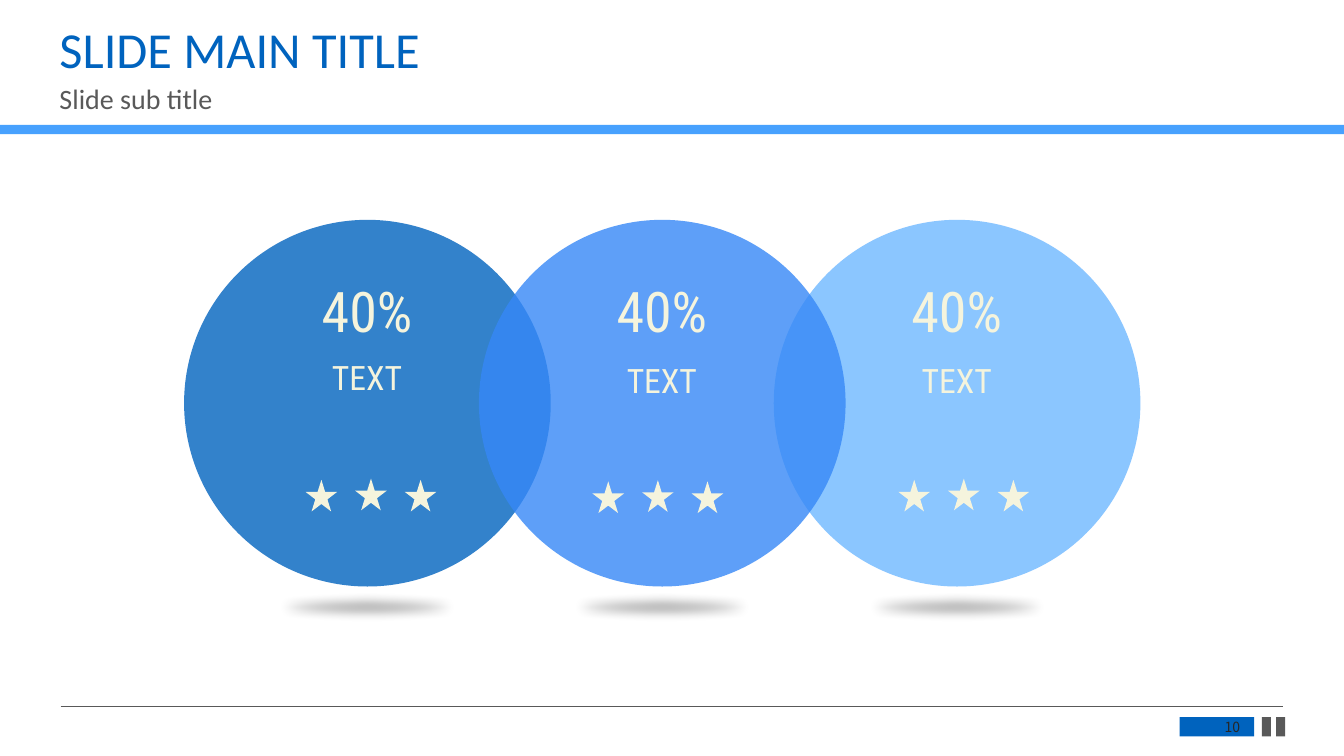
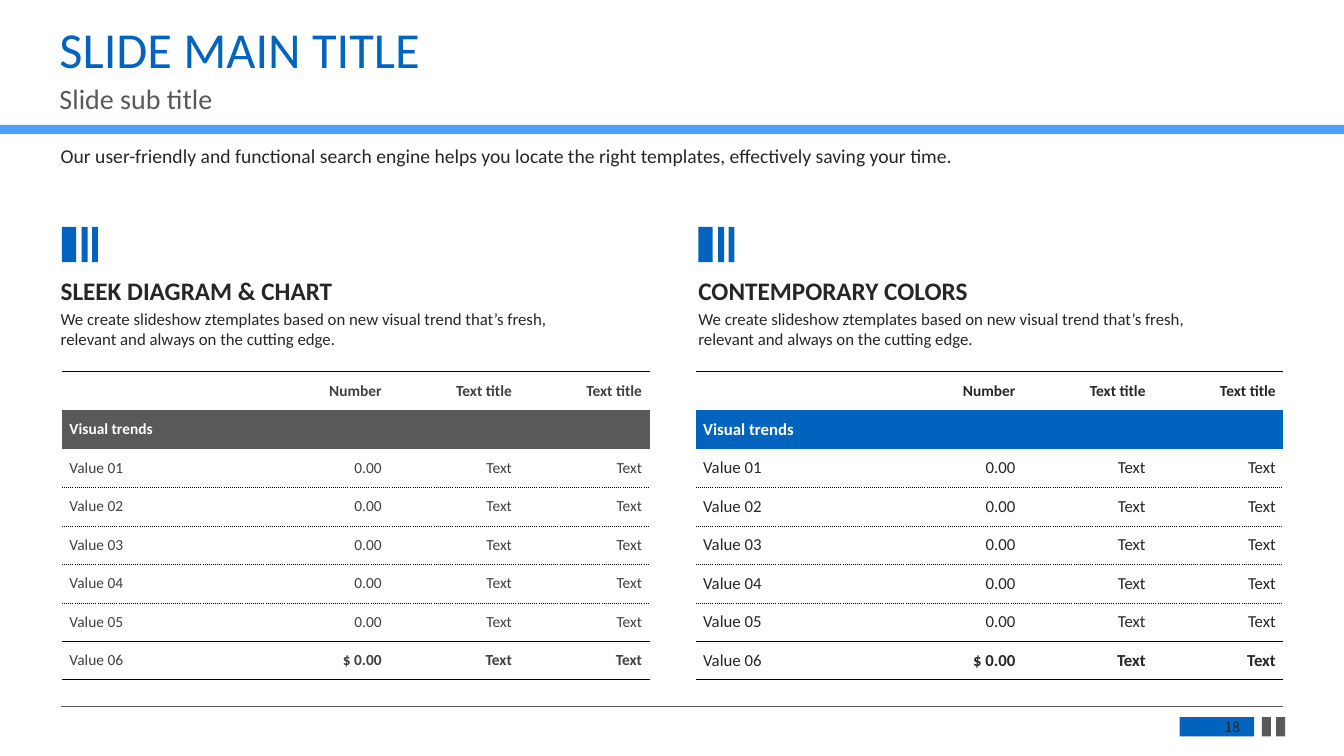
from lxml import etree
from pptx import Presentation
from pptx import util as u
from pptx.dml.color import RGBColor
from pptx.enum import shapes, text
from pptx.oxml import ns

COLORS = {
    "blue": "0063BE", "band": "47A1FE", "gray": "595959", "ink": "262626",
    "soft_ink": "404040", "middle": "3688F7", "light": "6EB8FF",
    "cream": "F5F4DD", "white": "FFFFFF", "black": "000000",
}
BODY_FONT, FIGURE_FONT, NUMBER_FONT = "Calibri", "Roboto Condensed", "Noto Sans CJK SC"
SHAPE = shapes.MSO_SHAPE
LEFT, CENTER, RIGHT = text.PP_ALIGN.LEFT, text.PP_ALIGN.CENTER, text.PP_ALIGN.RIGHT
TOP, MIDDLE = text.MSO_ANCHOR.TOP, text.MSO_ANCHOR.MIDDLE


def rgb(name):
    return RGBColor.from_string(COLORS[name])


def add_xml(parent, tag, **attributes):
    return etree.SubElement(parent, ns.qn(tag), attributes)


class Deck:
    """Shared style and the slide being built; lengths are in centimetres."""

    def __init__(self):
        self.presentation = Presentation()
        self.presentation.slide_width = u.Cm(33.87)
        self.presentation.slide_height = u.Cm(19.05)
        self.slide = None

    def new_slide(self, title, subtitle, number):
        self.slide = self.presentation.slides.add_slide(self.presentation.slide_layouts[6])
        # Band under the title
        self.shape(SHAPE.RECTANGLE, 0, 3.15, 33.87, 0.23, "band")
        # Footer rule and page marker
        self.line(1.53, 17.81, 32.33, 17.81, "gray", 0.5)
        for left, width, color in ((29.73, 1.88, "blue"), (31.8, 0.23, "gray"), (32.16, 0.23, "gray")):
            self.shape(SHAPE.RECTANGLE, left, 18.07, width, 0.49, color)
        self.text(number, 29.82, 18.1, 1.68, 0.43, 10, font=NUMBER_FONT, align=RIGHT, anchor=MIDDLE)
        # Title and subtitle
        self.text(title, 1.25, 0.5, 30.94, 1.63, 36, "blue", spacing=0.9)
        self.text(subtitle, 1.25, 2.02, 30.94, 1.14, 20, "gray", spacing=0.9)

    def shape(self, kind, left, top, width, height, color, opacity=100, soft_edge=0):
        shape = self.slide.shapes.add_shape(kind, u.Cm(left), u.Cm(top), u.Cm(width), u.Cm(height))
        shape.shadow.inherit = False
        shape.fill.solid()
        shape.fill.fore_color.rgb = rgb(color)
        shape.line.fill.background()
        properties = shape._element.spPr
        if opacity < 100:
            color_element = properties.find(ns.qn("a:solidFill"))[0]
            add_xml(color_element, "a:alpha", val=str(opacity * 1000))
        if soft_edge:
            effects = properties.find(ns.qn("a:effectLst"))
            add_xml(effects, "a:softEdge", rad=str(u.Pt(soft_edge)))

    def line(self, left, top, right, bottom, color, width):
        line = self.slide.shapes.add_connector(
            shapes.MSO_CONNECTOR.STRAIGHT, u.Cm(left), u.Cm(top), u.Cm(right), u.Cm(bottom))
        line.line.color.rgb = rgb(color)
        line.line.width = u.Pt(width)
        add_xml(line._element.spPr, "a:effectLst")

    def run(self, paragraph, words, size, color, font=BODY_FONT, bold=False):
        run = paragraph.add_run()
        run.text = words
        run.font.size = u.Pt(size)
        run.font.name = font
        run.font.bold = bold
        run.font.color.rgb = rgb(color)

    def text(self, words, left, top, width, height, size, color="ink", font=BODY_FONT,
             bold=False, align=LEFT, anchor=TOP, spacing=1.0):
        box = self.slide.shapes.add_textbox(u.Cm(left), u.Cm(top), u.Cm(width), u.Cm(height))
        frame = box.text_frame
        frame.word_wrap = True
        frame.vertical_anchor = anchor
        paragraph = frame.paragraphs[0]
        paragraph.alignment = align
        paragraph.line_spacing = spacing
        self.run(paragraph, words, size, color, font, bold)

    def borders(self, cell, top, bottom):
        properties = cell._tc.get_or_add_tcPr()
        for side, border in (("L", None), ("R", None), ("T", top), ("B", bottom)):
            width, dash = border or (0, None)
            line = add_xml(properties, f"a:ln{side}", w=str(u.Pt(width)))
            if not border:
                add_xml(line, "a:noFill")
                continue
            fill = add_xml(line, "a:solidFill")
            add_xml(fill, "a:srgbClr", val=COLORS["black"])
            add_xml(line, "a:prstDash", val=dash)

    def table(self, rows, left, top, widths, row_height, accent, ink, size):
        table = self.slide.shapes.add_table(
            len(rows), len(widths), u.Cm(left), u.Cm(top),
            u.Cm(sum(widths)), u.Cm(row_height * len(rows))).table
        table.first_row = table.horz_banding = False
        for column, width in zip(table.columns, widths):
            column.width = u.Cm(width)
        # Rules above and below the rows, from top to bottom
        thick, thin, dotted = (1, "solid"), (0.25, "solid"), (0.25, "sysDot")
        rules = [thick, None, None] + [dotted] * (len(rows) - 4) + [thin, thick]
        last = len(rows) - 1
        for row_index, row in enumerate(rows):
            table.rows[row_index].height = u.Cm(row_height)
            for column_index, words in enumerate(row):
                cell = table.cell(row_index, column_index)
                cell.margin_left = cell.margin_right = u.Cm(0.19)
                cell.margin_top = cell.margin_bottom = u.Cm(0.05)
                cell.vertical_anchor = MIDDLE
                self.borders(cell, rules[row_index], rules[row_index + 1])
                if row_index == 1:
                    cell.fill.solid()
                    cell.fill.fore_color.rgb = rgb(accent)
                else:
                    cell.fill.background()
                if words:
                    paragraph = cell.text_frame.paragraphs[0]
                    paragraph.alignment = RIGHT if column_index else LEFT
                    self.run(paragraph, words, size if row_index else 11,
                             "white" if row_index == 1 else ink,
                             bold=row_index < 2 or (row_index == last and column_index > 0))


def circles_slide(deck):
    deck.new_slide("SLIDE MAIN TITLE", "Slide sub title", "10")
    first, step, diameter = 4.64, 7.43, 9.24
    # Circles: the middle one lies on top
    for index, color in ((2, "light"), (0, "blue"), (1, "middle")):
        deck.shape(SHAPE.OVAL, first + index * step, 5.54, diameter, diameter, color, opacity=80)
    # Captions, ground shadows and stars
    for index, (label_top, star_left, star_top) in enumerate(
            ((8.88, 7.7, 12.09), (8.94, 14.93, 12.13), (8.94, 22.64, 12.09))):
        left = first + index * step
        deck.text("40%", left + 1.62, 6.85, 5.98, 1.96, 40, "cream", FIGURE_FONT, align=CENTER)
        deck.text("TEXT", left + 1.62, label_top, 5.98, 1.28, 24, "cream", FIGURE_FONT, align=CENTER)
        deck.shape(SHAPE.OVAL, left + 1.33, 14.91, 6.58, 0.79, "black", opacity=36, soft_edge=8)
        for star in range(3):
            deck.shape(SHAPE.STAR_5_POINT, star_left + star * 1.25,
                       star_top - (0.03 if star == 1 else 0), 0.8, 0.8, "cream")


def tables_slide(deck):
    deck.new_slide("SLIDE MAIN TITLE", "Slide sub title", "18")
    deck.text("Our user-friendly and functional search engine helps you locate the right templates, "
              "effectively saving your time.", 1.28, 3.5, 31.09, 0.86, 14)
    rows = [["", "Number", "Text title", "Text title"], ["Visual trends", "", "", ""]]
    rows += [[f"Value {number:02}", "$ 0.00" if number == 6 else "0.00", "Text", "Text"]
             for number in range(1, 7)]
    # Two columns: mark, heading, description, table
    for heading, text_left, mark_left, table_left, accent, ink, size in (
            ("SLEEK DIAGRAM & CHART", 1.28, 1.56, 1.56, "gray", "soft_ink", 11),
            ("CONTEMPORARY COLORS", 17.35, 17.6, 17.53, "blue", "ink", 12)):
        for offset, width in ((0, 0.36), (0.5, 0.15), (0.76, 0.15)):
            deck.shape(SHAPE.RECTANGLE, mark_left + offset, 5.72, width, 0.89, "blue")
        deck.text(heading, text_left, 6.9, 10.67, 0.97, 18, bold=True, spacing=0.9)
        deck.text("We create slideshow ztemplates based on new visual trend that’s fresh, "
                  "relevant and always on the cutting edge.", text_left, 7.65, 12.78, 1.3, 12)
        deck.table(rows, table_left, 9.37, (5.38, 2.87, 3.28, 3.28), 0.97, accent, ink, size)


def main():
    deck = Deck()
    circles_slide(deck)
    tables_slide(deck)
    deck.presentation.save("out.pptx")


if __name__ == "__main__":
    main()
